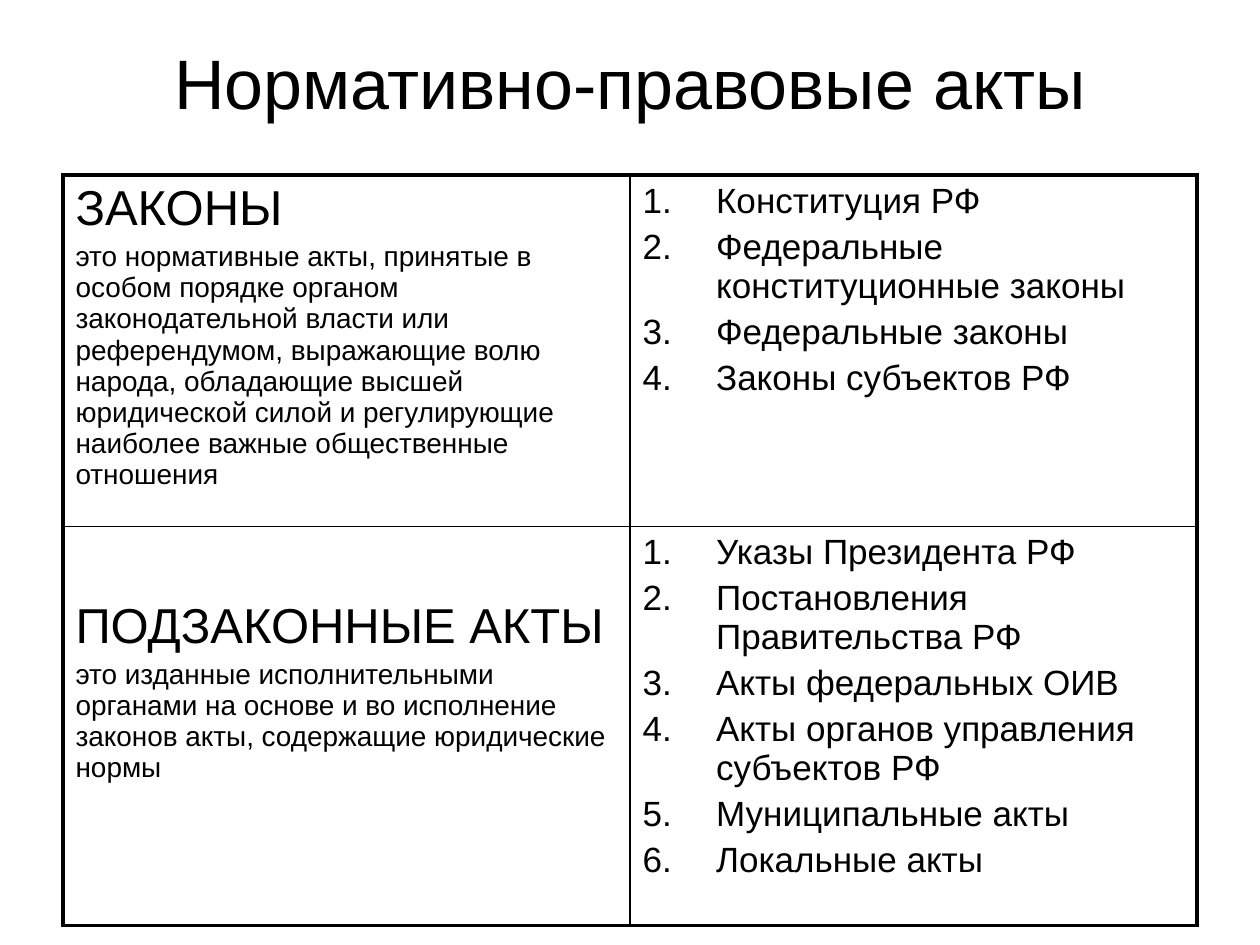
from lxml.etree import SubElement
from pptx import Presentation
from pptx.dml.color import RGBColor
from pptx.enum.text import MSO_ANCHOR, MSO_AUTO_SIZE, PP_ALIGN
from pptx.oxml.ns import qn
from pptx.util import Pt

# Content
TITLE = "Нормативно-правовые акты"
ACTS = [
    {
        "term": "ЗАКОНЫ",
        "definition": "это нормативные акты, принятые в особом порядке органом "
                      "законодательной власти или референдумом, выражающие волю народа, "
                      "обладающие высшей юридической силой и регулирующие наиболее важные "
                      "общественные отношения",
        "kinds": ["Конституция РФ", "Федеральные конституционные законы",
                  "Федеральные законы", "Законы субъектов РФ"],
        "height": 201,
        "top_margin": 3.6,
    },
    {
        "term": "ПОДЗАКОННЫЕ АКТЫ",
        "definition": "это изданные исполнительными органами на основе и во исполнение "
                      "законов акты, содержащие юридические нормы",
        "kinds": ["Указы Президента РФ", "Постановления Правительства РФ",
                  "Акты федеральных ОИВ", "Акты органов управления субъектов РФ",
                  "Муниципальные акты", "Локальные акты"],
        "height": 228,
        "top_margin": 41.4,
    },
]

# Style
FONT, BLACK = "Arial", "000000"
TERM_SIZE, DEFINITION_SIZE, KIND_SIZE = 28, 16, 20
LEFT, WIDTH, TABLE_TOP = 36, 648, 100
INNER, OUTER = 1, 2.25
INDENT = 42


def color(hex_code):
    return RGBColor.from_string(hex_code)


def add_text(paragraph, text, size):
    run = paragraph.add_run()
    run.text = text
    run.font.name = FONT
    run.font.size = Pt(size)
    run.font.color.rgb = color(BLACK)


def fill_cell(cell, lines, numbered=False):
    frame = cell.text_frame
    for index, (text, size) in enumerate(lines):
        paragraph = frame.add_paragraph() if index else frame.paragraphs[0]
        paragraph.space_before = Pt(size * 0.2 if index else 0)
        if numbered:
            properties = paragraph._p.get_or_add_pPr()
            properties.set("marL", str(Pt(INDENT)))
            properties.set("indent", str(-Pt(INDENT)))
            SubElement(properties, qn("a:buFont"), typeface=FONT)
            SubElement(properties, qn("a:buAutoNum"), type="arabicPeriod")
        add_text(paragraph, text, size)


def set_borders(cell, row, column):
    outer_sides = {"a:lnL": column == 0, "a:lnR": column == 1,
                   "a:lnT": row == 0, "a:lnB": row == len(ACTS) - 1}
    properties = cell._tc.get_or_add_tcPr()
    for position, (side, is_outer) in enumerate(outer_sides.items()):
        line = properties.makeelement(
            qn(side), {"w": str(Pt(OUTER if is_outer else INNER))})
        solid = SubElement(line, qn("a:solidFill"))
        SubElement(solid, qn("a:srgbClr"), val=BLACK)
        properties.insert(position, line)


deck = Presentation()
deck.slide_width, deck.slide_height = Pt(720), Pt(540)
slide = deck.slides.add_slide(deck.slide_layouts[5])

# Title
title = slide.shapes.title
title.left, title.top, title.width, title.height = Pt(LEFT), Pt(21.6), Pt(WIDTH), Pt(50)
title.text_frame.auto_size = MSO_AUTO_SIZE.NONE
title.text_frame.vertical_anchor = MSO_ANCHOR.MIDDLE
heading = title.text_frame.paragraphs[0]
heading.alignment = PP_ALIGN.CENTER
add_text(heading, TITLE, 40)

# Table: definition on the left, kinds of acts on the right
table = slide.shapes.add_table(
    len(ACTS), 2, Pt(LEFT), Pt(TABLE_TOP), Pt(WIDTH),
    Pt(sum(act["height"] for act in ACTS))).table
table.first_row = table.horz_banding = False
for column in table.columns:
    column.width = Pt(WIDTH / 2)

for row, act in enumerate(ACTS):
    table.rows[row].height = Pt(act["height"])
    definition, kinds = table.cell(row, 0), table.cell(row, 1)
    definition.margin_top = Pt(act["top_margin"])
    fill_cell(definition, [(act["term"], TERM_SIZE), (act["definition"], DEFINITION_SIZE)])
    fill_cell(kinds, [(kind, KIND_SIZE) for kind in act["kinds"]], numbered=True)
    for column, cell in enumerate((definition, kinds)):
        cell.fill.background()
        set_borders(cell, row, column)

deck.save("out.pptx")
